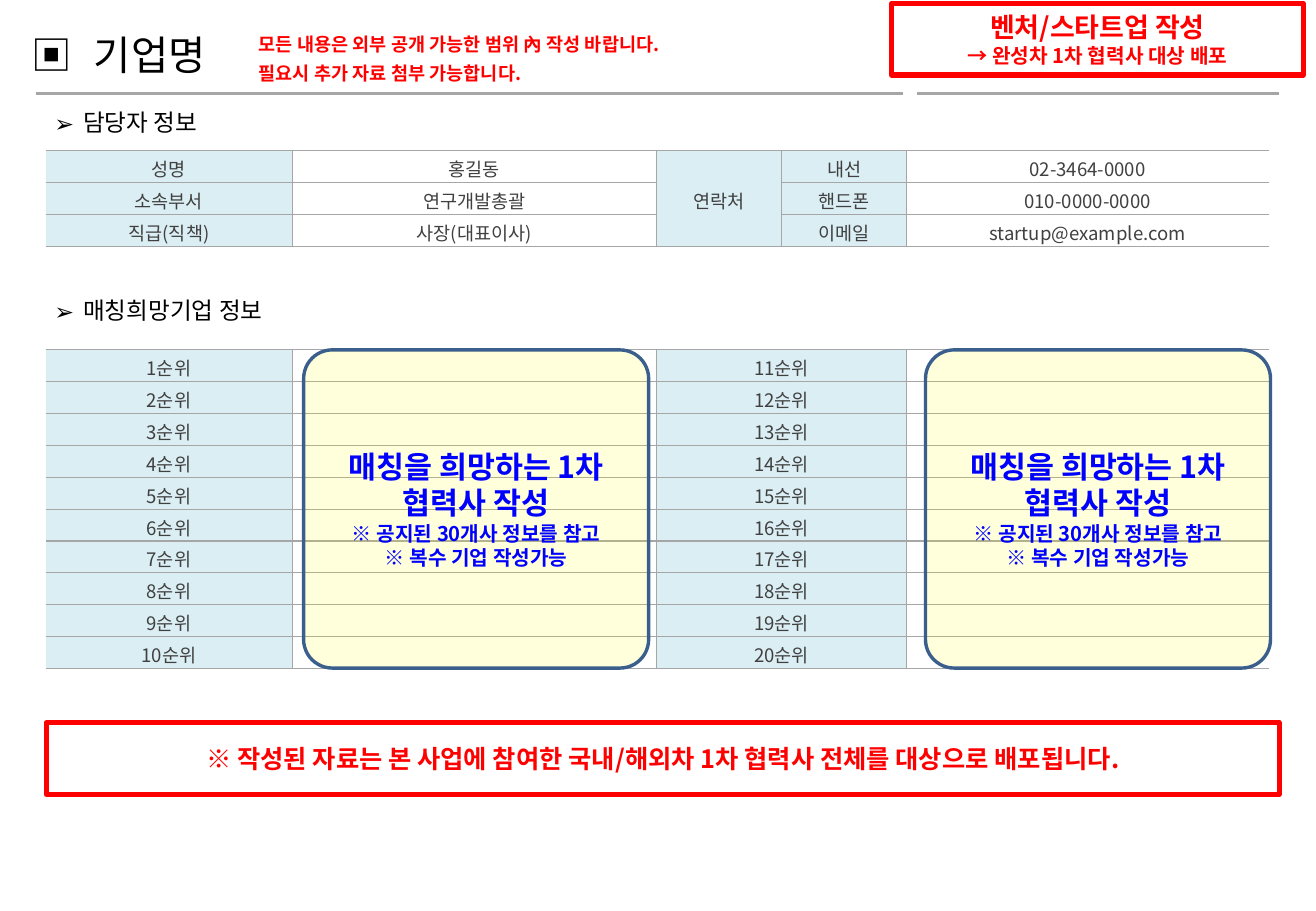
import pptx
import pptx.util
import pptx.dml.color
import pptx.enum.shapes
import pptx.enum.text
import pptx.oxml
import pptx.oxml.ns
import lxml.etree

Pt = pptx.util.Pt
RGB = pptx.dml.color.RGBColor
KIND = pptx.enum.shapes.MSO_SHAPE
MID = pptx.enum.text.MSO_ANCHOR.MIDDLE
LEFT = pptx.enum.text.PP_ALIGN.LEFT
MIDDLE = pptx.enum.text.PP_ALIGN.CENTER
qn = pptx.oxml.ns.qn

# Content
TITLE = "▣\t기업명"
NOTE = ["모든 내용은 외부 공개 가능한 범위 內 작성 바랍니다.",
        "필요시 추가 자료 첨부 가능합니다."]
HEADS = [("담당자 정보", 60), ("매칭희망기업 정보", 171.5)]
PERSON = [["성명", "홍길동", "연락처", "내선", "02-3464-0000"],
          ["소속부서", "연구개발총괄", "", "핸드폰", "010-0000-0000"],
          ["직급(직책)", "사장(대표이사)", "", "이메일", "startup@example.com"]]
RANKS = [[f"{n}순위", "", f"{n + 10}순위", ""] for n in range(1, 11)]
TAG = ["벤처/스타트업 작성", "→ 완성차 1차 협력사 대상 배포"]
WISH = ["매칭을 희망하는 1차 협력사 작성", "※ 공지된 30개사 정보를 참고",
        "※ 복수 기업 작성가능"]
NOTICE = ["※ 작성된 자료는 본 사업에 참여한 국내/해외차 1차 협력사 전체를 대상으로 배포됩니다."]

# Style
FONT = "Noto Sans CJK KR"
BLACK = RGB(0x00, 0x00, 0x00)
DARK = RGB(0x40, 0x40, 0x40)
GRAY = RGB(0xA6, 0xA6, 0xA6)
RED = RGB(0xFF, 0x00, 0x00)
BLUE = RGB(0x00, 0x00, 0xFF)
NAVY = RGB(0x3A, 0x5F, 0x8C)
PALE = RGB(0xDB, 0xEE, 0xF4)
WHITE = RGB(0xFF, 0xFF, 0xFF)
YELLOW = RGB(0xFF, 0xFF, 0x00)
ROW = 18.9
LEAD = 1.19

deck = pptx.Presentation()
deck.slide_width, deck.slide_height = Pt(780), Pt(540)
slide = deck.slides.add_slide(deck.slide_layouts[5])
shapes = slide.shapes


def write(frame, lines, sizes, color, bold=False, align=LEFT, gap=0):
    frame.text = "\n".join(lines)
    frame.word_wrap = True
    frame.vertical_anchor = MID
    for i, (para, size) in enumerate(zip(frame.paragraphs, sizes)):
        para.alignment = align
        para.line_spacing = Pt(round(size * LEAD, 1))
        para.space_before = Pt(gap if i else 0)
        # An empty cell takes its height from the end mark
        if not para.runs:
            lxml.etree.SubElement(para._p, qn("a:endParaRPr"), sz=str(size * 100))
        for run in para.runs:
            font = run.font
            font.name, font.size, font.bold = FONT, Pt(size), bold
            font.color.rgb = color
            east = lxml.etree.SubElement(run._r.get_or_add_rPr(), qn("a:ea"))
            east.set("typeface", FONT)


def rule(x, end, y):
    line = shapes.add_connector(pptx.enum.shapes.MSO_CONNECTOR.STRAIGHT,
                                Pt(x), Pt(y), Pt(end), Pt(y))
    line.line.color.rgb, line.line.width = GRAY, Pt(2)
    lxml.etree.SubElement(line._element.spPr, qn("a:effectLst"))


def panel(kind, box, edge, width):
    shape = shapes.add_shape(kind, *map(Pt, box))
    shape.shadow.inherit = False
    shape.fill.background()
    shape.line.color.rgb, shape.line.width = edge, Pt(width)
    return shape


def border(cell, sides):
    props = cell._tc.get_or_add_tcPr()
    for i, side in enumerate("LRTB"):
        fill = (f'<a:solidFill><a:srgbClr val="{GRAY}"/></a:solidFill>'
                if side in sides else "<a:noFill/>")
        props.insert(i, pptx.oxml.parse_xml(
            f'<a:ln{side} xmlns:a="http://schemas.openxmlformats.org/drawingml/2006/main"'
            f' w="9525">{fill}</a:ln{side}>'))


def grid(rows, widths, top, shaded):
    table = shapes.add_table(len(rows), len(widths), Pt(27), Pt(top),
                             Pt(sum(widths)), Pt(ROW * len(rows))).table
    table.first_row = table.horz_banding = False
    for col, width in zip(table.columns, widths):
        col.width = Pt(width)
    for r, row in enumerate(rows):
        table.rows[r].height = Pt(ROW)
        for c, text in enumerate(row):
            cell = table.cell(r, c)
            write(cell.text_frame, [text], [11], DARK, align=MIDDLE)
            cell.vertical_anchor = MID
            cell.margin_left = cell.margin_right = Pt(2.8)
            cell.margin_top, cell.margin_bottom = Pt(5), Pt(0)
            cell.fill.solid()
            cell.fill.fore_color.rgb = PALE if c in shaded else WHITE
            sides = "TB" + ("L" if c else "") + ("R" if c < len(row) - 1 else "")
            border(cell, sides)
    return table


# Title, note and rules
title = shapes.title
title.left, title.top, title.width, title.height = map(Pt, (11.5, 14, 170, 37))
write(title.text_frame, [TITLE], [24], BLACK)
props = title.text_frame.paragraphs[0]._p.get_or_add_pPr()
tabs = lxml.etree.SubElement(props, qn("a:tabLst"))
lxml.etree.SubElement(tabs, qn("a:tab"), pos=str(Pt(37)), algn="l")
note = shapes.add_textbox(*map(Pt, (146.2, 16, 351, 38)))
write(note.text_frame, NOTE, [11, 11], RED, True, gap=4)
for x, end in [(21.6, 535), (543.6, 758.2)]:
    rule(x, end, 55.4)

# Section headings
for text, top in HEADS:
    head = shapes.add_textbox(Pt(25.2), Pt(top), Pt(190), Pt(24.5))
    write(head.text_frame, [text], [14], BLACK)
    props = head.text_frame.paragraphs[0]._p.get_or_add_pPr()
    props.set("marL", str(Pt(17)))
    props.set("indent", str(-Pt(17)))
    lxml.etree.SubElement(props, qn("a:buFont"), typeface=FONT)
    lxml.etree.SubElement(props, qn("a:buChar"), char="➢")

# Tables
person = grid(PERSON, [146.2, 216, 74.1, 74.1, 214.6], 89.3, (0, 2, 3))
person.cell(0, 2).merge(person.cell(2, 2))
grid(RANKS, [146.2, 216, 148.2, 214.6], 207.4, (0, 2))

# Red frames
for box, lines, sizes in [((528.5, 2, 244, 42.5), TAG, [16, 12]),
                          ((27.4, 428.4, 730.8, 42.5), NOTICE, [15])]:
    frame = panel(KIND.RECTANGLE, box, RED, 3)
    write(frame.text_frame, lines, sizes, RED, True, MIDDLE)

# Wish panels
for x in (180, 548.6):
    wish = panel(KIND.ROUNDED_RECTANGLE, (x, 207.4, 204.5, 188.6), NAVY, 2)
    wish.adjustments[0] = 0.09
    wish.fill.solid()
    wish.fill.fore_color.rgb = YELLOW
    tint = wish._element.spPr.find(qn("a:solidFill"))[0]
    lxml.etree.SubElement(tint, qn("a:alpha"), val="14000")
    write(wish.text_frame, WISH, [18, 12, 12], BLUE, True, MIDDLE)

deck.save("out.pptx")
